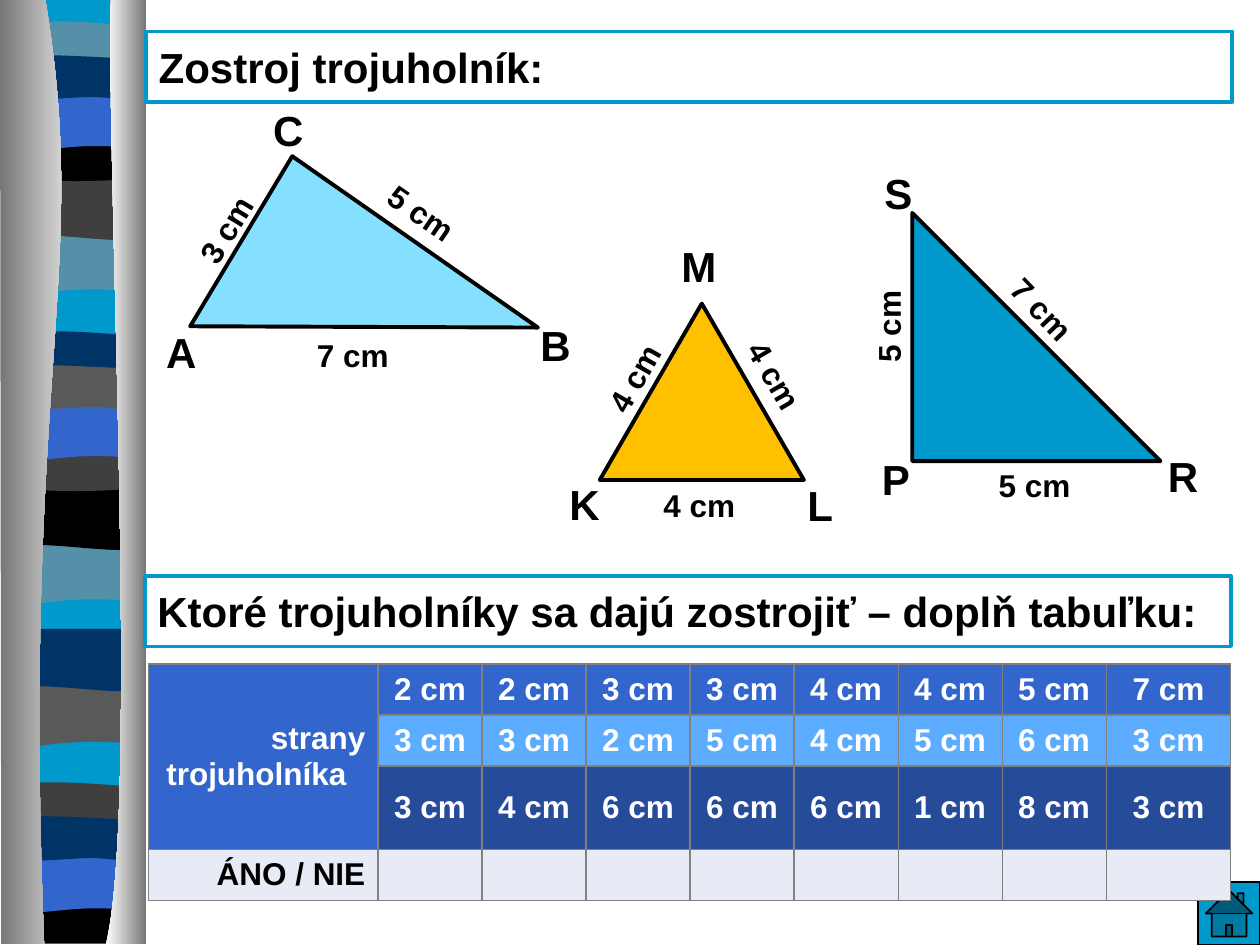
"""Build the slide about constructing triangles from three sides."""
from lxml import etree
from pptx import Presentation
from pptx.dml.color import RGBColor
from pptx.enum.shapes import MSO_SHAPE
from pptx.enum.text import MSO_ANCHOR, MSO_AUTO_SIZE, PP_ALIGN
from pptx.oxml.ns import qn
from pptx.util import Inches, Pt

LEFT, MID, RIGHT = PP_ALIGN.LEFT, PP_ALIGN.CENTER, PP_ALIGN.RIGHT
HOME, RECT = MSO_SHAPE.ACTION_BUTTON_HOME, MSO_SHAPE.RECTANGLE
ISO, ORTHO = MSO_SHAPE.ISOSCELES_TRIANGLE, MSO_SHAPE.RIGHT_TRIANGLE
NONE, GROW = MSO_AUTO_SIZE.NONE, MSO_AUTO_SIZE.SHAPE_TO_FIT_TEXT
MIDDLE = MSO_ANCHOR.MIDDLE

HUES = {
    "black": "000000", "white": "FFFFFF", "teal": "0099CC", "steel": "5490A8",
    "coal": "3F3F3F", "ash": "595959", "blue": "3366CC", "navy": "003366",
    "sky": "5CADFF", "deep": "264C99", "pale": "E8EAF6", "ice": "85E0FF",
    "gold": "FFC000", "edge": "808080", "dark": "767676",
}
FONT = {"name": "Arial", "bold": True}

HEAD = "Zostroj trojuholník:"
TASK = "Ktoré trojuholníky sa dajú zostrojiť – doplň tabuľku:"
SIDES = [
    ("blue", [2, 2, 3, 3, 4, 4, 5, 7]),
    ("sky", [3, 3, 2, 5, 4, 5, 6, 3]),
    ("deep", [3, 4, 6, 6, 6, 1, 8, 3]),
]
GRID = (1.18, 5.27, 8.59, 1.62)
FIRST, FINAL = 1.82, 0.99
WIDTHS = [FIRST] + [(GRID[2] - FIRST - FINAL) / 7] * 7 + [FINAL]

ABC = [(2.32, 1.24), (1.51, 2.59), (4.27, 2.6)]
FORMS = [
    (ORTHO, (7.24, 1.69, 1.97, 1.97), "teal"),
    (ISO, (4.76, 2.41, 1.62, 1.4), "gold"),
]
LENGTHS = [
    (7, 2.21, 2.62, 1.18, 0), (5, 2.61, 1.49, 1.47, 34.6),
    (3, 1.2, 1.62, 1.18, 301.3), (5, 7.66, 3.65, 1.1, 0),
    (5, 6.46, 2.39, 1.18, 270), (7, 7.76, 2.25, 1.02, 46.1),
    (4, 4.96, 3.81, 1.18, 0), (4, 4.44, 2.8, 1.18, 299.8),
    (4, 5.56, 2.78, 1.18, 59.5),
]
POINTS = [
    ("A", 1.22, 2.54), ("B", 4.19, 2.49), ("C", 2.07, 0.78),
    ("L", 6.31, 3.76), ("K", 4.42, 3.75), ("M", 5.31, 1.86),
    ("P", 6.9, 3.55), ("R", 9.17, 3.53), ("S", 6.92, 1.28),
]

START, END = (0.05, 0), (1.14, 0)
FLAT = [START, END]
SAG = [START, (0.24, 0.05), (0.96, 0.05), END]
DIP = [START, (0.72, 0.05), (0.91, 0), END]
BANDS = [
    (1.85, FLAT, 2.32, [START, (0.24, 0.08), (0.39, -0.08), END],
     [(0, "steel"), (2.46, "steel"), (3.59, "ash")]),
    (1.41, FLAT, 1.88, [START, (0.39, -0.06), (0.96, 0.08), END],
     [(0, "coal"), (2.46, "black"), (3.58, "navy")]),
    (0.21, [START, (0.12, -0.05), (0.29, -0.04), (0.47, -0.04),
            (0.65, -0.04), (1, -0.01), END], 0.45, SAG,
     [(0, "steel"), (2.46, "navy"), (6.04, "coal")]),
    (1.08, DIP, 1.4, SAG, [(0, "black"), (2.46, "coal")]),
    (7.12, DIP, 7.49, FLAT, [(0, "black")]),
    (0.74, FLAT, 1.21, [START, (0.22, 0), (0.54, -0.05), (0.72, -0.05),
                        (0.9, -0.05), (0.97, -0.05), END],
     [(0, "blue"), (2.46, "blue"), (6.05, "blue")]),
    (0.46, [START, (0.21, -0.05), (0.79, 0), (0.97, 0),
            (1.15, 0), (1.1, 0), END],
     0.77, [START, (0.17, 0.05), (0.54, 0), (0.72, 0),
            (0.9, 0), (1.07, 0.05), END],
     [(0, "navy"), (2.46, "ash"), (6.04, "navy")]),
]
PILLARS = [
    ([(0.36, 0), (0.72, 2.16), (0.17, 2.96), (0.35, 7.49)],
     [(0.01, 7.49), (0, 0)], ("dark", "white")),
    ([(0.88, 0), (0.84, 1.25), (1.11, 6.46), (0.84, 7.49)],
     [(1.16, 7.49), (1.16, 0)], ("white", "dark")),
]


def hue(name):
    return RGBColor.from_string(HUES[name])


def paint(shape, fill, line=None, width=2.25):
    shape.shadow.inherit = False
    shape.fill.solid()
    shape.fill.fore_color.rgb = hue(fill)
    if line:
        shape.line.color.rgb = hue(line)
        shape.line.width = Pt(width)
    else:
        shape.line.fill.background()


def write(frame, text, size, ink="black", align=LEFT):
    for i, part in enumerate(text.split("\n")):
        para = frame.add_paragraph() if i else frame.paragraphs[0]
        para.alignment = align
        run = para.add_run()
        run.text = part
        for key, value in FONT.items():
            setattr(run.font, key, value)
        run.font.size = Pt(size)
        run.font.color.rgb = hue(ink)


def setup(frame, **props):
    for key, value in props.items():
        setattr(frame, key, value)


def outline(shapes, *runs):
    dots = [(x * 1000, y * 1000) for run in runs for x, y in run]
    pen = shapes.build_freeform(*dots[0], scale=Inches(1) / 1000)
    pen.add_line_segments(dots[1:], close=True)
    shape = pen.convert_to_shape()
    lines = list(shape._element.iter(qn("a:lnTo")))
    at = 0
    for run in runs:
        for i in range(at, at + len(run) - 1, 3) if len(run) > 3 else ():
            bend = etree.Element(qn("a:cubicBezTo"))
            lines[i].addprevious(bend)
            for line in lines[i:i + 3]:
                bend.append(line[0])
                line.getparent().remove(line)
        at += len(run)
    return shape


def border(slide, master):
    group = slide.shapes.add_group_shape()
    shapes = group.shapes
    paint(outline(shapes, [(0.05, 0), (1.14, 0)], [(1.14, 7.47), (0.05, 7.47)]), "teal")
    for top, crest, base, trough, tiles in BANDS:
        for shift, name in tiles:
            up = [(x, top + shift + y) for x, y in crest]
            down = [(x, base + shift + y) for x, y in reversed(trough)]
            paint(outline(shapes, up, down), name)
    for knots, rest, names in PILLARS:
        shape = outline(shapes, knots, rest)
        paint(shape, "white")
        shape.fill.gradient()
        shape.fill.gradient_angle = 0
        for stop, name in zip(shape.fill.gradient_stops, names):
            stop.color.rgb = hue(name)
    master.shapes._spTree.insert(2, group._element)


def form(shapes, kind, box, fill, line="black", width=2.25):
    shape = shapes.add_shape(kind, *map(Inches, box))
    paint(shape, fill, line, width)
    return shape


def label(shapes, text, box, size, align=LEFT, turn=0):
    shape = shapes.add_textbox(*map(Inches, box))
    shape.rotation = turn
    setup(shape.text_frame, word_wrap=True, auto_size=GROW)
    write(shape.text_frame, text, size, align=align)


def put(cell, text, fill, ink="white", align=MID):
    cell.fill.solid()
    cell.fill.fore_color.rgb = hue(fill)
    cell.vertical_anchor = MIDDLE
    if text:
        write(cell.text_frame, text, 18, ink, align)
    else:
        cell.text_frame.paragraphs[0].font.size = Pt(18)
    props = cell._tc.get_or_add_tcPr()
    for i, side in enumerate(("a:lnL", "a:lnR", "a:lnT", "a:lnB")):
        line = etree.Element(qn(side), w=str(Pt(0.75)))
        solid = etree.SubElement(line, qn("a:solidFill"))
        etree.SubElement(solid, qn("a:srgbClr"), val=HUES["edge"])
        props.insert(i, line)


def table(shapes):
    rows = len(SIDES) + 1
    grid = shapes.add_table(rows, len(WIDTHS), *map(Inches, GRID)).table
    for col, width in zip(grid.columns, WIDTHS):
        col.width = Inches(width)
    for r, (fill, row) in enumerate(SIDES):
        put(grid.cell(r, 0), "" if r else "strany\ntrojuholníka", "blue", align=RIGHT)
        for c, size in enumerate(row, 1):
            put(grid.cell(r, c), f"{size} cm", fill)
    grid.cell(0, 0).merge(grid.cell(rows - 2, 0))
    last = grid.cell(0, 0).text_frame.paragraphs[1]
    last.alignment = LEFT
    last._p.get_or_add_pPr().set("marL", str(Inches(0.04)))
    for c in range(len(WIDTHS)):
        put(grid.cell(rows - 1, c), "" if c else "ÁNO / NIE", "pale", "black", RIGHT)


def main():
    deck = Presentation()
    deck.slide_width, deck.slide_height = Inches(10), Inches(7.5)
    slide = deck.slides.add_slide(deck.slide_layouts[5])
    shapes = slide.shapes
    border(slide, deck.slide_master)
    title = shapes.title
    spots = zip(("left", "top", "width", "height"), (1.16, 0.25, 8.62, 0.56))
    for key, value in spots:
        setattr(title, key, Inches(value))
    title.fill.background()
    title.line.color.rgb = hue("teal")
    title.line.width = Pt(2.25)
    form(shapes, HOME, (9.51, 7, 0.49, 0.5), "teal", width=1)
    task = form(shapes, RECT, (1.15, 4.57, 8.62, 0.56), "white", "teal", 2)
    for shape, text in ((title, HEAD), (task, TASK)):
        setup(shape.text_frame, word_wrap=True, auto_size=NONE, vertical_anchor=MIDDLE)
        write(shape.text_frame, text, 24)
    table(shapes)
    paint(outline(shapes, ABC), "ice", "black")
    for kind, box, fill in FORMS:
        form(shapes, kind, box, fill)
    for size, x, y, width, turn in LENGTHS:
        label(shapes, f"{size} cm", (x, y, width, 0.4), 18, MID, turn)
    for name, x, y in POINTS:
        label(shapes, name, (x, y, 0.45 if name == "P" else 0.55, 0.5), 24)
    deck.save("out.pptx")


if __name__ == "__main__":
    main()
